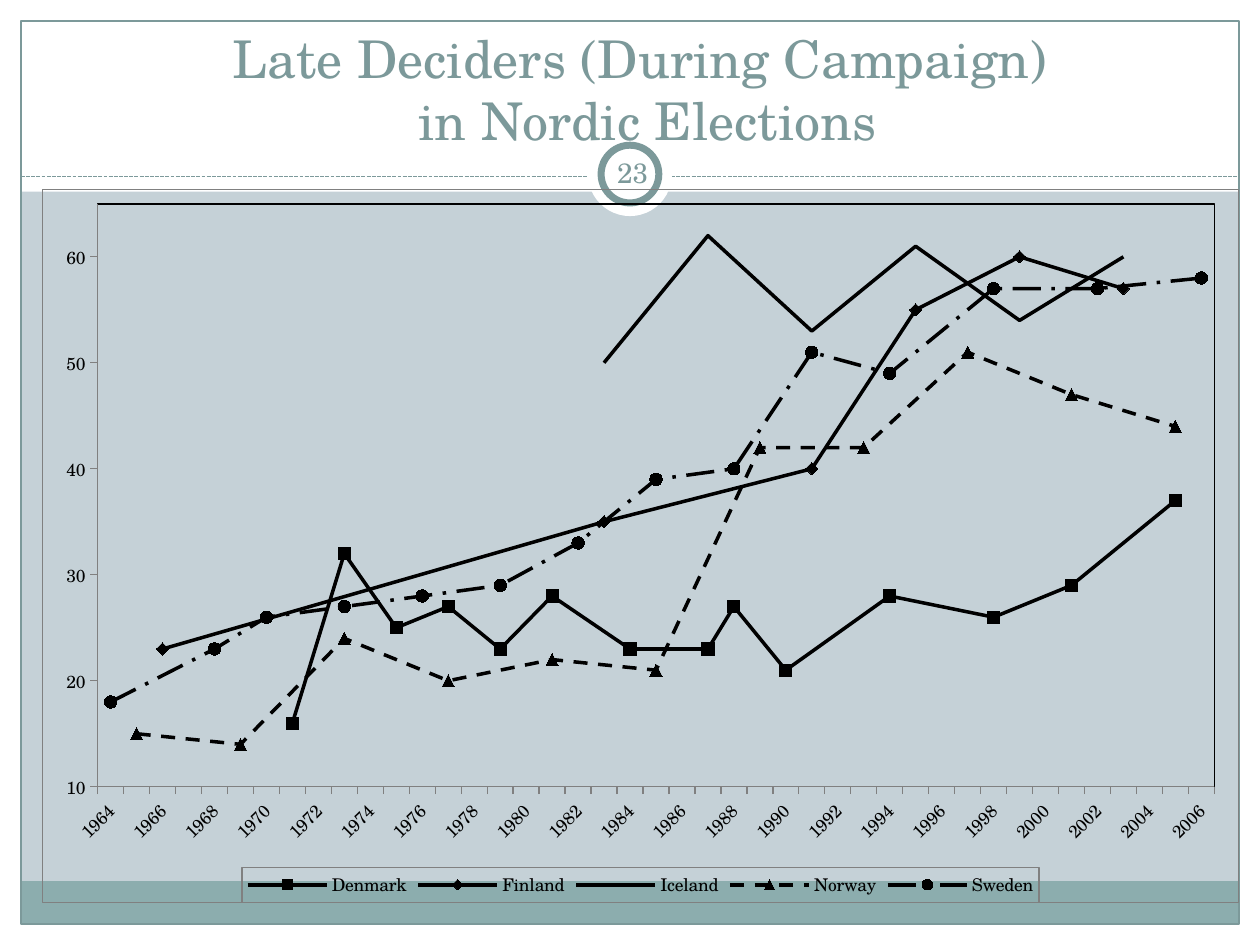
from lxml import etree
from pptx import Presentation
from pptx.chart.data import CategoryChartData
from pptx.dml.color import RGBColor
from pptx.enum.chart import XL_CHART_TYPE, XL_LEGEND_POSITION, XL_MARKER_STYLE, XL_TICK_MARK
from pptx.enum.dml import MSO_LINE
from pptx.enum.shapes import MSO_CONNECTOR, MSO_SHAPE
from pptx.enum.text import MSO_ANCHOR, PP_ALIGN
from pptx.oxml import parse_xml
from pptx.oxml.ns import nsdecls, qn
from pptx.util import Pt

WHITE = RGBColor(0xFF, 0xFF, 0xFF)
BLACK = RGBColor(0, 0, 0)
GREY = RGBColor(0x80, 0x80, 0x80)
SAGE = RGBColor(0x7C, 0x99, 0x9A)
TEAL = RGBColor(0x8C, 0xAD, 0xAE)
MIST = RGBColor(0xC5, 0xD1, 0xD7)
FONT = "TeX Gyre Schola"

RECT, OVAL = MSO_SHAPE.RECTANGLE, MSO_SHAPE.OVAL
SQUARE, DIAMOND = XL_MARKER_STYLE.SQUARE, XL_MARKER_STYLE.DIAMOND
TRIANGLE, CIRCLE = XL_MARKER_STYLE.TRIANGLE, XL_MARKER_STYLE.CIRCLE
NO_MARKER = XL_MARKER_STYLE.NONE
SOLID, DASH, DASH_DOT = MSO_LINE.SOLID, MSO_LINE.DASH, MSO_LINE.LONG_DASH_DOT
OUTSIDE = XL_TICK_MARK.OUTSIDE

# Content
TITLE = ["Late Deciders (During Campaign)", " in Nordic Elections"]
PAGE = "23"
YEARS = range(1964, 2007)
# name, marker, dash, share of late deciders by election year
COUNTRIES = [
    ("Denmark", SQUARE, SOLID, {
        1971: 16, 1973: 32, 1975: 25, 1977: 27, 1979: 23, 1981: 28, 1984: 23, 1987: 23,
        1988: 27, 1990: 21, 1994: 28, 1998: 26, 2001: 29, 2005: 37}),
    ("Finland", DIAMOND, SOLID, {
        1966: 23, 1983: 35, 1991: 40, 1995: 55, 1999: 60, 2003: 57}),
    ("Iceland", NO_MARKER, SOLID, {
        1983: 50, 1987: 62, 1991: 53, 1995: 61, 1999: 54, 2003: 60}),
    ("Norway", TRIANGLE, DASH, {
        1965: 15, 1969: 14, 1973: 24, 1977: 20, 1981: 22, 1985: 21, 1989: 42, 1993: 42,
        1997: 51, 2001: 47, 2005: 44}),
    ("Sweden", CIRCLE, DASH_DOT, {
        1964: 18, 1968: 23, 1970: 26, 1973: 27, 1976: 28, 1979: 29, 1982: 33, 1985: 39,
        1988: 40, 1991: 51, 1994: 49, 1998: 57, 2002: 57, 2006: 58}),
]

# Frame, in points
W, H, EDGE = 720, 540, 12
RULE_Y = 101
BADGE_X, BADGE_Y = W / 2, 99.5
FRAME = [  # shape, left, top, width, height, fill, line width
    (RECT, 0, H - EDGE, W, EDGE, WHITE, 0),
    (RECT, 0, 0, W, 109.5, WHITE, 0),
    (RECT, 0, 0, EDGE, H, WHITE, 0),
    (RECT, W - EDGE, 0, EDGE, H, WHITE, 0),
    (RECT, EDGE, 503.5, W - 2 * EDGE, 24.5, TEAL, 0),
    (RECT, EDGE, EDGE, W - 2 * EDGE, H - 2 * EDGE, None, 0.75),
]
BADGE = [(48, 0), (33, 4)]  # diameter, line width


def add_panel(shapes, kind, x, y, w, h, fill, line):
    sp = shapes.add_shape(kind, Pt(x), Pt(y), Pt(w), Pt(h))
    sp.shadow.inherit = False
    if fill is None:
        sp.fill.background()
    else:
        sp.fill.solid()
        sp.fill.fore_color.rgb = fill
    if line:
        sp.line.color.rgb = SAGE
        sp.line.width = Pt(line)
    else:
        sp.line.fill.background()


def add_run(p, text, size):
    r = p.add_run()
    r.text = text
    r.font.name, r.font.size, r.font.color.rgb = FONT, Pt(size), SAGE


def outline(color):
    return parse_xml(
        f'<c:spPr {nsdecls("c", "a")}><a:noFill/><a:ln w="9525"><a:solidFill>'
        f'<a:srgbClr val="{color}"/></a:solidFill></a:ln></c:spPr>')


def layout(x, y, w, h, inner=False):
    target = '<c:layoutTarget val="inner"/>' if inner else ""
    return parse_xml(
        f'<c:layout {nsdecls("c")}><c:manualLayout>{target}'
        f'<c:xMode val="edge"/><c:yMode val="edge"/><c:x val="{x}"/><c:y val="{y}"/>'
        f'<c:w val="{w}"/><c:h val="{h}"/></c:manualLayout></c:layout>')


prs = Presentation()
prs.slide_width, prs.slide_height = Pt(W), Pt(H)
slide = prs.slides.add_slide(prs.slide_layouts[5])
shapes = slide.shapes
slide.background.fill.solid()
slide.background.fill.fore_color.rgb = MIST

# Frame, dashed rule and page badge
for panel in FRAME:
    add_panel(shapes, *panel)
rule = shapes.add_connector(MSO_CONNECTOR.STRAIGHT, Pt(EDGE), Pt(RULE_Y), Pt(W - EDGE), Pt(RULE_Y))
rule.line.color.rgb, rule.line.width = SAGE, Pt(0.75)
rule.line.dash_style = MSO_LINE.SQUARE_DOT
etree.SubElement(rule._element.spPr, qn("a:effectLst"))
for d, line in BADGE:
    add_panel(shapes, OVAL, BADGE_X - d / 2, BADGE_Y - d / 2, d, d, WHITE, line)

# Title, raised above the frame
title = shapes.title
shapes._spTree.append(title._element)
title.left, title.top, title.width, title.height = Pt(36), Pt(18), Pt(660), Pt(72)
tf = title.text_frame
tf.vertical_anchor = MSO_ANCHOR.BOTTOM
p = tf.paragraphs[0]
p.alignment = PP_ALIGN.CENTER
add_run(p, TITLE[0], 29.7)
p.add_line_break()
add_run(p, TITLE[1], 29.7)

# Page number
tf = shapes.add_textbox(Pt(343.5), Pt(81), Pt(36), Pt(34.5)).text_frame
tf.word_wrap = True
tf.vertical_anchor = MSO_ANCHOR.MIDDLE
tf.margin_left = tf.margin_right = tf.margin_top = tf.margin_bottom = Pt(3.6)
p = tf.paragraphs[0]
p.alignment = PP_ALIGN.CENTER
add_run(p, PAGE, 16)

# Chart
data = CategoryChartData()
data.categories = [str(year) for year in YEARS]
for name, _, _, shares in COUNTRIES:
    data.add_series(name, [shares.get(year) for year in YEARS])
chart = shapes.add_chart(XL_CHART_TYPE.LINE_MARKERS, Pt(24), Pt(108), Pt(684), Pt(408), data).chart
chart.has_title = False
chart.font.name, chart.font.size, chart.font.color.rgb = FONT, Pt(10), BLACK

for s, (_, marker, dash, _) in zip(chart.plots[0].series, COUNTRIES):
    s.smooth = False
    s.format.line.color.rgb, s.format.line.width = BLACK, Pt(2)
    s.format.line.dash_style = dash
    s.marker.style = marker
    if marker != NO_MARKER:
        s.marker.size = 7
        s.marker.format.fill.solid()
        s.marker.format.fill.fore_color.rgb = BLACK
        s.marker.format.line.fill.background()

# Axes
cat, val = chart.category_axis, chart.value_axis
for axis in (cat, val):
    axis.has_major_gridlines = False
    axis.major_tick_mark = OUTSIDE
    axis.minor_tick_mark = XL_TICK_MARK.NONE
    axis.format.line.color.rgb, axis.format.line.width = GREY, Pt(0.75)
    axis.tick_labels.font.size = Pt(10)
val.minimum_scale, val.maximum_scale, val.major_unit = 10, 65, 10
cat._element.find(qn("c:txPr")).find(qn("a:bodyPr")).set("rot", "-2700000")
no_multi = cat._element.find(qn("c:noMultiLvlLbl"))
for tag, step in (("tickLblSkip", 2), ("tickMarkSkip", 1)):
    no_multi.addprevious(parse_xml(f'<c:{tag} {nsdecls("c")} val="{step}"/>'))

# Legend
chart.has_legend = True
legend = chart.legend
legend.position = XL_LEGEND_POSITION.BOTTOM
legend.include_in_layout = False
legend._element.find(qn("c:legendPos")).addnext(layout(0.17, 0.95, 0.67, 0.05))
legend._element.find(qn("c:overlay")).addnext(outline(GREY))

# Plot position, borders, and lines that span missing years
root = chart._chartSpace.find(qn("c:chart"))
plot_area = root.find(qn("c:plotArea"))
for old in plot_area.findall(qn("c:layout")):
    plot_area.remove(old)
plot_area.insert(0, layout(0.046, 0.02, 0.934, 0.818, inner=True))
plot_area.append(outline(BLACK))
root.addnext(outline(GREY))
root.find(qn("c:dispBlanksAs")).set("val", "span")

prs.save("out.pptx")
